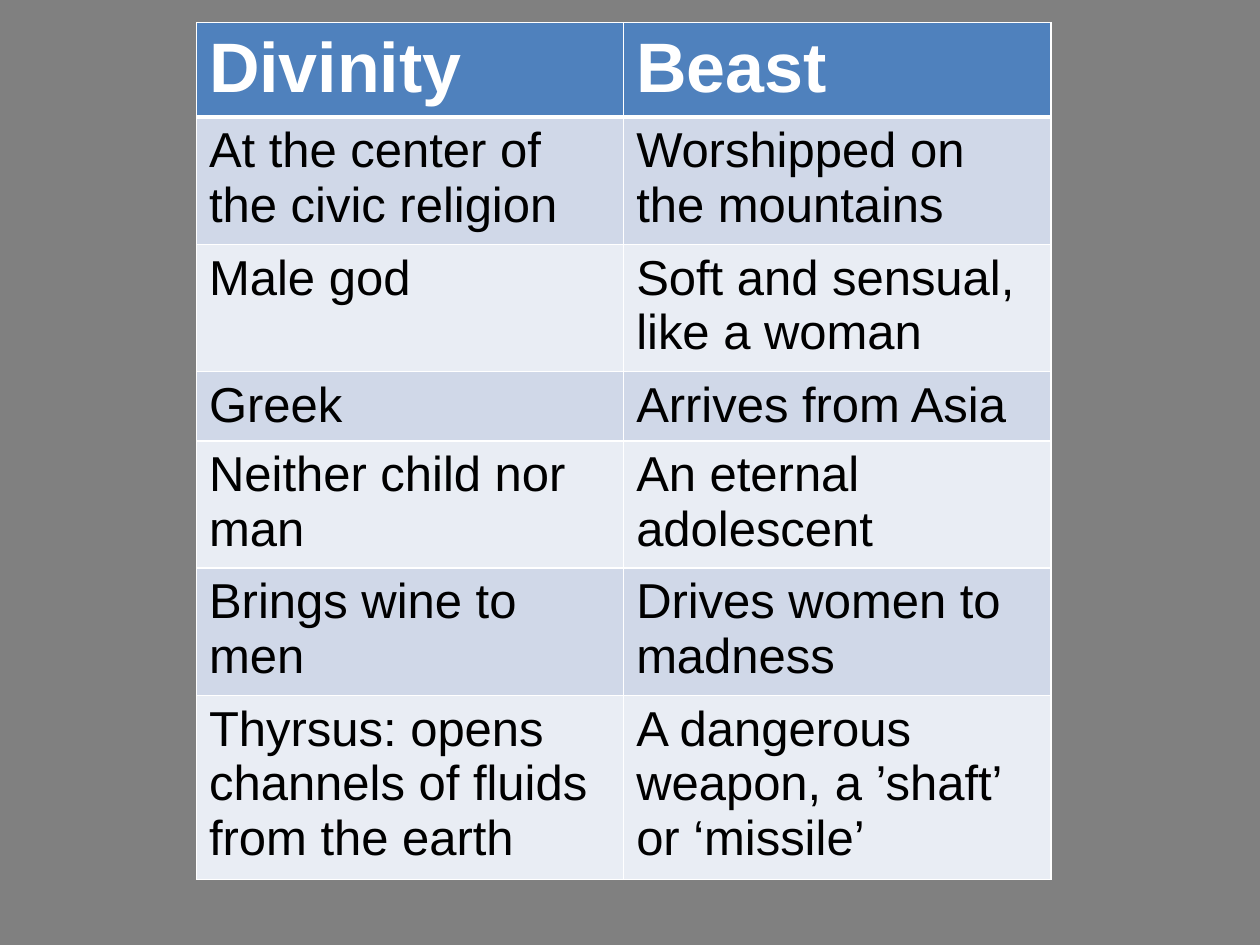
from lxml.etree import SubElement
from pptx import Presentation
from pptx.dml.color import RGBColor
from pptx.oxml.ns import qn
from pptx.util import Inches, Pt

ROWS = [
    ("Divinity", "Beast"),
    ("At the center of the civic religion", "Worshipped on the mountains"),
    ("Male god", "Soft and sensual, like a woman"),
    ("Greek", "Arrives from Asia"),
    ("Neither child nor man", "An eternal adolescent"),
    ("Brings wine to men", "Drives women to madness"),
    ("Thyrsus: opens channels of fluids from the earth",
     "A dangerous weapon, a ’shaft’ or ‘missile’"),
]
HEIGHTS = [0.75, 1.01, 1.01, 0.55, 1.01, 1.01, 1.46]
WIDTH = 3.39


def color(code):
    return RGBColor.from_string(code)


class Deck:
    font = "Arial"
    back = "808080"
    head = "4F81BD"
    bands = ("E9EDF4", "D0D8E8")
    white = "FFFFFF"
    black = "000000"

    def __init__(self):
        self.file = Presentation()
        self.file.slide_width = Inches(10)
        self.file.slide_height = Inches(7.5)

    def page(self):
        self.slide = self.file.slides.add_slide(self.file.slide_layouts[6])
        fill = self.slide.background.fill
        fill.solid()
        fill.fore_color.rgb = color(self.back)

    def edge(self, cell, side, size):
        props = cell._tc.get_or_add_tcPr()
        line = SubElement(props, qn(f"a:ln{side}"), w=str(Pt(size)))
        fill = SubElement(line, qn("a:solidFill"))
        SubElement(fill, qn("a:srgbClr"), val=self.white)

    def cell(self, cell, text, row):
        top = row == 0
        sizes = {"L": 1, "R": 1, "T": 3 if row == 1 else 1, "B": 3 if top else 1}
        for side, size in sizes.items():
            self.edge(cell, side, size)
        cell.fill.solid()
        cell.fill.fore_color.rgb = color(self.head if top else self.bands[row % 2])
        run = cell.text_frame.paragraphs[0].add_run()
        run.text = text
        run.font.name = self.font
        run.font.size = Pt(40 if top else 28)
        run.font.bold = top
        run.font.color.rgb = color(self.white if top else self.black)

    def table(self, left, top, width, heights, rows):
        count = len(rows[0])
        table = self.slide.shapes.add_table(
            len(rows), count, Inches(left), Inches(top),
            Inches(width * count), Inches(sum(heights))).table
        for col in table.columns:
            col.width = Inches(width)
        for i, (height, texts) in enumerate(zip(heights, rows)):
            table.rows[i].height = Inches(height)
            for j, text in enumerate(texts):
                self.cell(table.cell(i, j), text, i)


def main():
    deck = Deck()
    deck.page()
    deck.table(1.56, 0.18, WIDTH, HEIGHTS, ROWS)
    deck.file.save("out.pptx")


if __name__ == "__main__":
    main()
